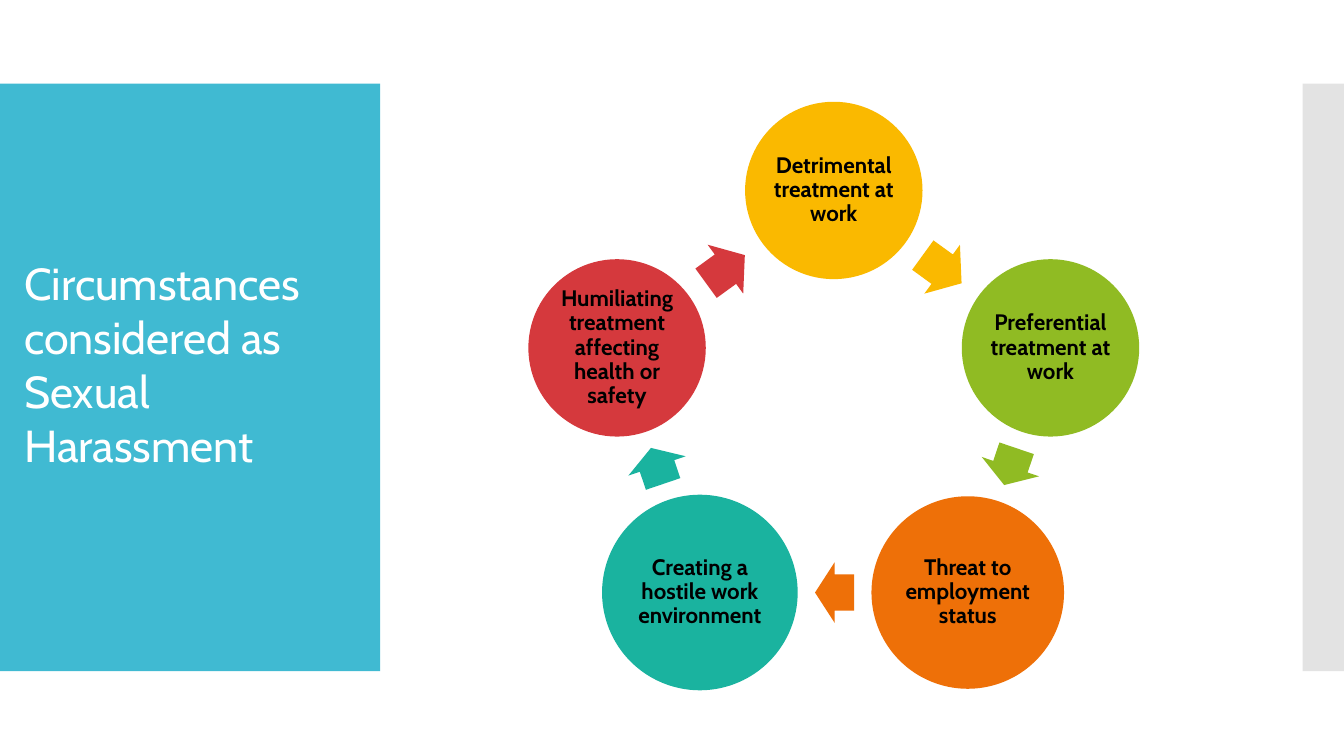
from math import atan2, cos, degrees, hypot, radians, sin

from lxml import etree
from pptx import Presentation
from pptx.dml.color import RGBColor
from pptx.enum.shapes import MSO_SHAPE
from pptx.enum.text import MSO_ANCHOR, PP_ALIGN
from pptx.oxml.ns import qn
from pptx.util import Inches, Pt

FONT = "Cabin"
TITLE = ["Circumstances", "considered as", "Sexual", "Harassment"]
# label, colour, diameter, upward shift from the ring; clockwise from the top
STEPS = [
    ("Detrimental treatment at work", "FAB900", 1.76, 0),
    ("Preferential treatment at work", "90BB23", 1.76, 0),
    ("Threat to employment status", "EE7008", 1.91, 0.1),
    ("Creating a hostile work environment", "1AB39F", 1.94, 0.1),
    ("Humiliating treatment affecting health or safety", "D5393D", 1.76, 0),
]
RING_X, RING_Y, RING_R = 8.27, 4.15, 2.26
ARROW_SHARE, ARROW_H = 0.53, 0.6


def color(code):
    return RGBColor.from_string(code)


def add_solid(slide, kind, box, fill):
    """Add a borderless preset shape; box is left, top, width, height."""
    shape = slide.shapes.add_shape(kind, *map(Inches, box))
    shape.shadow.inherit = False
    shape.fill.solid()
    shape.fill.fore_color.rgb = color(fill)
    shape.line.fill.background()
    return shape


def style(para, size, ink, bold=False):
    font = para.font
    font.name, font.size, font.bold = FONT, Pt(size), bold
    font.color.rgb = color(ink)


def add_panels(slide):
    add_solid(slide, MSO_SHAPE.RECTANGLE, (0, 0.83, 3.77, 5.83), "40BAD2")
    strip = add_solid(slide, MSO_SHAPE.RECTANGLE, (12.92, 0.83, 0.41, 5.83), "C8C8C8")
    tint = strip.fill._xPr.find(".//" + qn("a:srgbClr"))
    etree.SubElement(tint, qn("a:alpha")).set("val", "50000")


def add_title(slide):
    box = slide.shapes.add_textbox(*map(Inches, (0.14, 2.49, 3.01, 2.26)))
    frame = box.text_frame
    frame.word_wrap = True
    frame.text = "\n".join(TITLE)
    for para in frame.paragraphs:
        style(para, 32, "FFFFFF")


def add_step(slide, x, y, size, label, fill):
    box = (x - size / 2, y - size / 2, size, size)
    frame = add_solid(slide, MSO_SHAPE.OVAL, box, fill).text_frame
    frame.word_wrap = True
    frame.vertical_anchor = MSO_ANCHOR.MIDDLE
    frame.margin_left = frame.margin_right = Inches(0.02)
    frame.margin_top = frame.margin_bottom = Inches(0.02)
    frame.text = label
    para = frame.paragraphs[0]
    para.alignment = PP_ALIGN.CENTER
    para.line_spacing = 0.9
    style(para, 16, "000000", bold=True)


def add_arrow(slide, start, end, fill):
    """Centre an arrow in the gap between two circles (x, y, diameter)."""
    x, y, size = start
    dx, dy = end[0] - x, end[1] - y
    dist = hypot(dx, dy)
    gap = dist - (size + end[2]) / 2
    part = (size + gap) / 2 / dist
    width = gap * ARROW_SHARE
    left = x + dx * part - width / 2
    top = y + dy * part - ARROW_H / 2
    arrow = add_solid(slide, MSO_SHAPE.RIGHT_ARROW, (left, top, width, ARROW_H), fill)
    arrow.adjustments[0], arrow.adjustments[1] = 0.6, 0.5
    arrow.rotation = degrees(atan2(dy, dx)) % 360


def add_cycle(slide):
    spots = []
    for i, (_, _, size, lift) in enumerate(STEPS):
        turn = radians(360 / len(STEPS) * i)
        x = RING_X + RING_R * sin(turn)
        y = RING_Y - RING_R * cos(turn) - lift
        spots.append((x, y, size))
    for i, (label, fill, _, _) in enumerate(STEPS):
        add_step(slide, *spots[i], label, fill)
        add_arrow(slide, spots[i], spots[(i + 1) % len(spots)], fill)


def main():
    deck = Presentation()
    deck.slide_width, deck.slide_height = Inches(13.33), Inches(7.5)
    slide = deck.slides.add_slide(deck.slide_layouts[6])
    add_panels(slide)
    add_title(slide)
    add_cycle(slide)
    deck.save("out.pptx")


if __name__ == "__main__":
    main()
